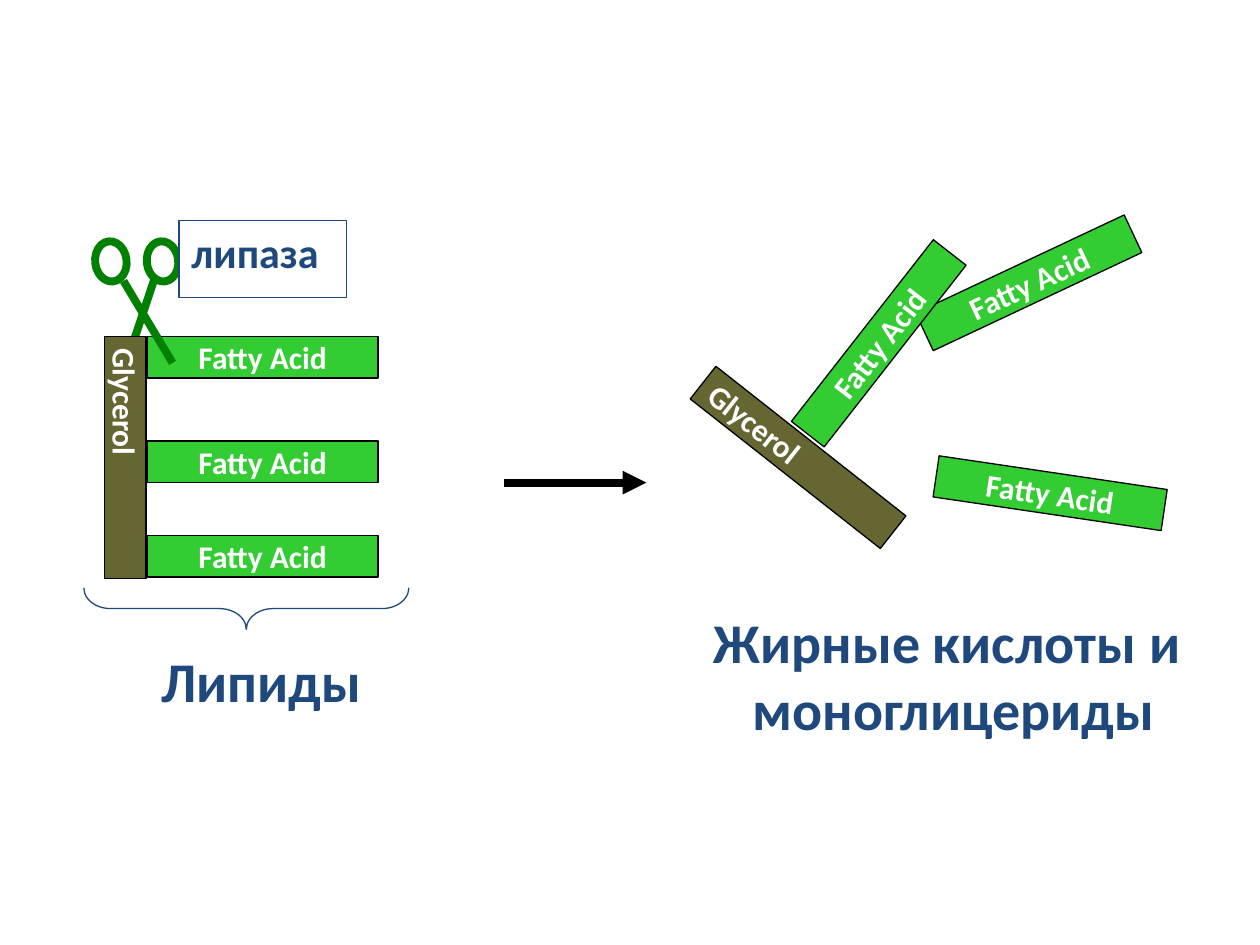
from dataclasses import dataclass

from lxml import etree
from pptx import Presentation
from pptx import util as u
from pptx.dml.color import RGBColor
from pptx.enum import shapes, text
from pptx.oxml.ns import qn


@dataclass(frozen=True)
class Theme:
    font: str = "Calibri"
    navy: str = "1F497D"
    white: str = "FFFFFF"
    black: str = "000000"
    glycerol: str = "666633"
    acid: str = "33CC33"
    scissors: str = "008000"
    part_size: int = 18
    label_size: int = 24
    caption_size: int = 32
    thin: float = 0.75
    thick: float = 4.5


THEME = Theme()
BAR = 0.33
ACID_LENGTH = 1.83
GLYCEROL_LENGTH = 1.92


def add_shape(page, kind, left, top, width, height, fill, line, weight, angle=0):
    shape = page.shapes.add_shape(
        kind, u.Inches(left), u.Inches(top), u.Inches(width), u.Inches(height))
    shape.shadow.inherit = False
    shape.rotation = angle
    if fill:
        shape.fill.solid()
        shape.fill.fore_color.rgb = RGBColor.from_string(fill)
    else:
        shape.fill.background()
    shape.line.color.rgb = RGBColor.from_string(line)
    shape.line.width = u.Pt(weight)
    return shape


def add_line(page, start, end, color):
    line = page.shapes.add_connector(
        shapes.MSO_CONNECTOR.STRAIGHT, *(u.Inches(n) for n in (*start, *end)))
    line.line.color.rgb = RGBColor.from_string(color)
    line.line.width = u.Pt(THEME.thick)
    etree.SubElement(line.element.spPr, qn("a:effectLst"))
    return line


def write(shape, lines, size, color, anchor, wrap=False, vertical=False):
    frame = shape.text_frame
    frame.word_wrap = wrap
    frame.vertical_anchor = anchor
    if vertical:
        shape.element.txBody.bodyPr.set("vert", "eaVert")
    for index, line in enumerate(lines):
        para = frame.add_paragraph() if index else frame.paragraphs[0]
        para.alignment = text.PP_ALIGN.CENTER
        span = para.add_run()
        span.text = line
        span.font.name = THEME.font
        span.font.size = u.Pt(size)
        span.font.bold = True
        span.font.color.rgb = RGBColor.from_string(color)
    return frame


def add_part(page, name, left, top, width, height, fill, angle, vertical=False):
    part = add_shape(page, shapes.MSO_SHAPE.RECTANGLE, left, top, width, height,
                     fill, THEME.black, THEME.thin, angle)
    write(part, [name], THEME.part_size, THEME.white,
          text.MSO_ANCHOR.MIDDLE, vertical=vertical)


def add_glycerol(page, left, top, angle=0):
    add_part(page, "Glycerol", left, top, BAR, GLYCEROL_LENGTH,
             THEME.glycerol, angle, vertical=True)


def add_fatty_acid(page, left, top, angle=0):
    add_part(page, "Fatty Acid", left, top, ACID_LENGTH, BAR, THEME.acid, angle)


def add_caption(page, lines, left, top, width, height):
    caption = page.shapes.add_textbox(
        u.Inches(left), u.Inches(top), u.Inches(width), u.Inches(height))
    frame = write(caption, lines, THEME.caption_size, THEME.navy, text.MSO_ANCHOR.TOP)
    frame.auto_size = text.MSO_AUTO_SIZE.SHAPE_TO_FIT_TEXT


def add_scissors_front(page, left, top):
    for offset in (0.41, 0):
        add_shape(page, shapes.MSO_SHAPE.OVAL, left + offset, top, 0.32, 0.25,
                  None, THEME.scissors, THEME.thick, 83.4)
    add_line(page, (left + 0.26, top + 0.28), (left + 0.65, top + 0.93), THEME.scissors)


def add_enzyme_label(page, left, top):
    """Place the label as a turned box whose vertical text reads level."""
    label = add_shape(page, shapes.MSO_SHAPE.RECTANGLE, left, top, 0.61, 1.33,
                      THEME.white, THEME.navy, THEME.thin, 270)
    frame = write(label, ["липаза"], THEME.label_size, THEME.navy,
                  text.MSO_ANCHOR.TOP, wrap=True, vertical=True)
    frame.paragraphs[0].space_before = u.Pt(THEME.label_size / 2)
    frame.auto_size = text.MSO_AUTO_SIZE.SHAPE_TO_FIT_TEXT


def add_lipid(page, left, top):
    """Draw the whole lipid, with the scissors' rear blade behind it."""
    add_line(page, (left + 0.56, top + 0.81), (left + 0.32, top + 1.53), THEME.scissors)
    add_glycerol(page, left + 0.16, top + 1.28)
    for offset in (1.28, 2.11, 2.86):
        add_fatty_acid(page, left + 0.5, top + offset)
    add_scissors_front(page, left + 0.05, top + 0.56)
    add_enzyme_label(page, left + 1.11, top)
    add_caption(page, ["Липиды"], left + 0.5, top + 3.69, 1.81, 0.64)
    brace = add_shape(page, shapes.MSO_SHAPE.LEFT_BRACE, left + 1.12, top + 2.15,
                      0.33, 2.58, None, THEME.navy, THEME.thin, 270)
    brace.adjustments[0] = 0.646
    brace.adjustments[1] = 0.5


def add_products(page, left, top):
    add_glycerol(page, left + 0.62, top + 0.59, 308.2)
    for x, y, angle in ((1.7, 0, 334.8), (0.51, 0.48, 308), (1.87, 1.67, 8.4)):
        add_fatty_acid(page, left + x, top + y, angle)
    add_caption(page, ["Жирные кислоты и ", "моноглицериды"],
                left, top + 2.69, 4.04, 1.18)


def add_reaction_arrow(page, left, top, length):
    arrow = add_line(page, (left, top), (left + length, top), THEME.black)
    outline = arrow.element.spPr.find(qn("a:ln"))
    etree.SubElement(outline, qn("a:tailEnd"), type="triangle")


def main():
    deck = Presentation()
    deck.slide_width, deck.slide_height = u.Inches(10), u.Inches(7.5)
    page = deck.slides.add_slide(deck.slide_layouts[6])
    add_lipid(page, 0.67, 1.39)
    add_reaction_arrow(page, 4, 3.83, 1.13)
    add_products(page, 5.55, 2.08)
    deck.save("out.pptx")


if __name__ == "__main__":
    main()
